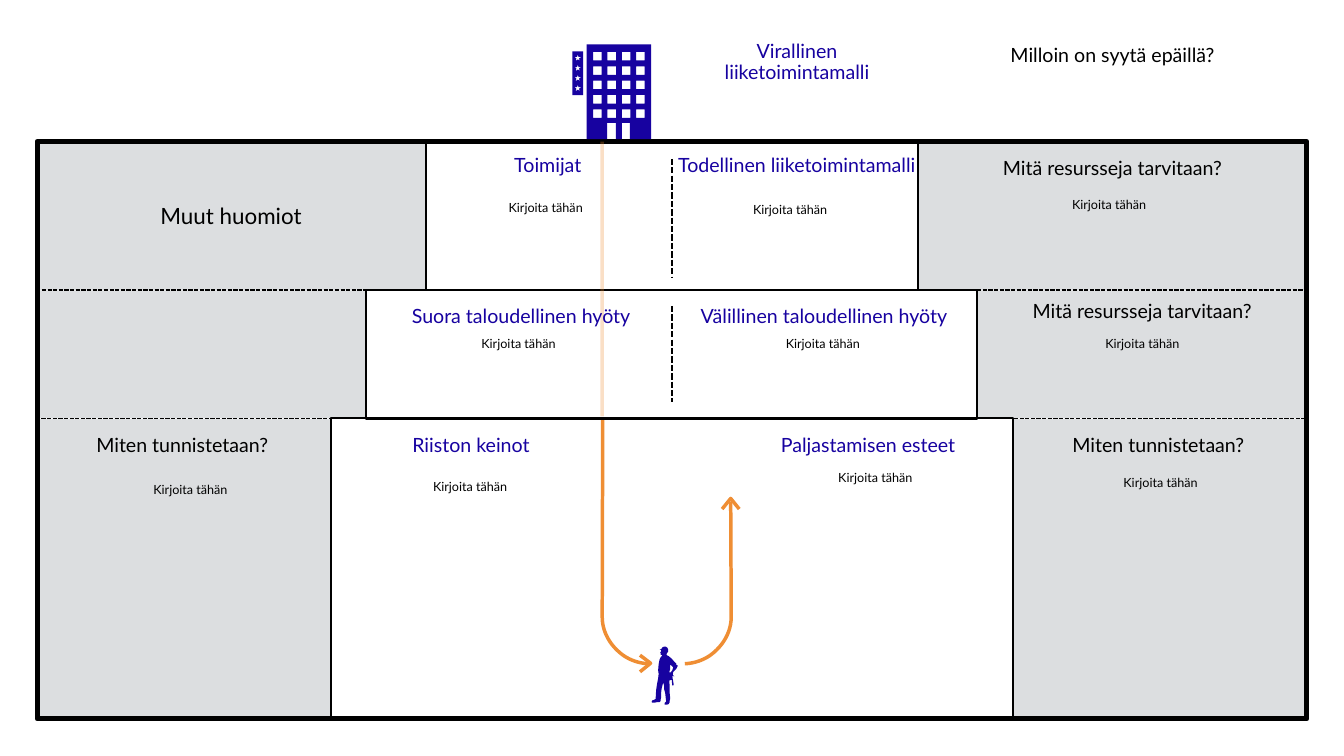
from pptx import Presentation
from pptx.dml.color import RGBColor
from pptx.enum.dml import MSO_LINE
from pptx.enum.shapes import MSO_CONNECTOR, MSO_SHAPE
from pptx.enum.text import MSO_ANCHOR, MSO_AUTO_SIZE, PP_ALIGN
from pptx.oxml.ns import qn
from pptx.util import Inches, Pt
from lxml.etree import SubElement

BLACK = RGBColor(0x00, 0x00, 0x00)
GREY = RGBColor(0xDC, 0xDE, 0xE0)
BLUE = RGBColor(0x17, 0x02, 0xA0)
ORANGE = RGBColor(0xEF, 0x8E, 0x34)

prs = Presentation()
prs.slide_width, prs.slide_height = Inches(26.67), Inches(15)
s = prs.slides.add_slide(prs.slide_layouts[6])


def add_outline(contours, fill=None):
    """Filled closed contours, or open orange lines when fill is None."""
    builder = None
    for contour in contours:
        points = [(Inches(x), Inches(y)) for x, y in contour]
        if builder is None:
            builder = s.shapes.build_freeform(*points[0])
        else:
            builder.move_to(*points[0])
        builder.add_line_segments(points[1:], close=fill is not None)
    sp = builder.convert_to_shape()
    sp.shadow.inherit = False
    if fill is None:
        sp.fill.background()
        sp.line.color.rgb = ORANGE
        sp.line.width = Pt(5)
    else:
        sp.fill.solid()
        sp.fill.fore_color.rgb = fill
        sp.line.fill.background()


def write(tf, text, size, color, spacing=None):
    tf.word_wrap = True
    p = tf.paragraphs[0]
    p.alignment = PP_ALIGN.CENTER
    if spacing:
        p.line_spacing = spacing
    r = p.add_run()
    r.text = text
    r.font.name, r.font.size, r.font.color.rgb = "Lato", Pt(size), color


# Route down to the worker: straight drop, then a curve of two Béziers
curves = [
    [(11.95, 12.24), (11.95, 12.54), (12.11, 12.81), (12.35, 12.99)],
    [(12.35, 12.99), (12.5, 13.1), (12.68, 13.16), (12.87, 13.17)],
]
bend = []
for a, b, c, d in curves:
    for i in range(13):
        t = i / 12
        bend.append(tuple(
            (1 - t) ** 3 * a[k] + 3 * (1 - t) ** 2 * t * b[k]
            + 3 * (1 - t) * t ** 2 * c[k] + t ** 3 * d[k] for k in (0, 1)))
add_outline([[(11.96, 8.29)] + bend])

# Side panels, then level boxes and the outer frame
LEFT, RIGHT = 0.73, 25.93
panels = []
for y, w, h in [(8.31, 5.82, 5.97), (5.76, 6.55, 2.53), (2.79, 7.71, 2.96)]:
    panels += [(LEFT, y, w, h), (RIGHT - w, y, w, h)]
for x, y, w, h in panels:
    sp = s.shapes.add_shape(MSO_SHAPE.RECTANGLE, Inches(x), Inches(y), Inches(w), Inches(h))
    sp.shadow.inherit = False
    sp.fill.solid()
    sp.fill.fore_color.rgb = GREY
    sp.line.fill.background()
    if (x, y) == (LEFT, 2.79):
        sp.text_frame.vertical_anchor = MSO_ANCHOR.MIDDLE
        write(sp.text_frame, "Muut huomiot", 32, BLACK)

for x, y, w, h, width in [
    (6.56, 8.3, 13.54, 5.98, 3),
    (7.27, 5.75, 12.12, 2.56, 3),
    (8.45, 2.79, 9.76, 2.96, 3),
    (0.74, 2.81, 25.19, 11.45, 8),
]:
    sp = s.shapes.add_shape(MSO_SHAPE.RECTANGLE, Inches(x), Inches(y), Inches(w), Inches(h))
    sp.shadow.inherit = False
    sp.fill.background()
    sp.line.color.rgb = BLACK
    sp.line.width = Pt(width)

# Dividers and the faint upper part of the route
for x1, y1, x2, y2, color, width, dash in [
    (11.95, 8.26, 11.95, 2.81, ORANGE, 5, None),
    (0.71, 8.3, 6.53, 8.3, BLACK, 2, MSO_LINE.SQUARE_DOT),
    (20.12, 8.3, 25.95, 8.3, BLACK, 2, MSO_LINE.SQUARE_DOT),
    (19.39, 5.75, 25.88, 5.75, BLACK, 2, MSO_LINE.SQUARE_DOT),
    (0.72, 5.75, 7.28, 5.75, BLACK, 2, MSO_LINE.SQUARE_DOT),
    (13.33, 6.07, 13.33, 7.98, BLACK, 3, MSO_LINE.SQUARE_DOT),
    (13.33, 3.15, 13.33, 5.49, BLACK, 3, MSO_LINE.SQUARE_DOT),
]:
    line = s.shapes.add_connector(
        MSO_CONNECTOR.STRAIGHT, Inches(x1), Inches(y1), Inches(x2), Inches(y2))
    line.line.color.rgb = color
    line.line.width = Pt(width)
    if dash:
        line.line.dash_style = dash
    else:
        rgb = line._element.spPr.find(".//" + qn("a:srgbClr"))
        SubElement(rgb, qn("a:alpha")).set("val", "27000")
    SubElement(line._element.spPr, qn("a:effectLst"))

# Office building: walls with doors, sign, windows and stars
building = [
    [(11.64, 0.88), (11.64, 2.76), (12.05, 2.76), (12.05, 2.44), (12.22, 2.44),
     (12.22, 2.76), (12.34, 2.76), (12.34, 2.44), (12.5, 2.44), (12.5, 2.76),
     (12.92, 2.76), (12.92, 0.88)],
    [(11.36, 1.02), (11.36, 1.89), (11.57, 1.89), (11.57, 1.02)],
]
for row in range(5):
    for col in range(4):
        x, y = 11.77 + col * 0.285, 1.03 + row * 0.285
        building.append([(x, y), (x + 0.17, y), (x + 0.17, y + 0.17), (x, y + 0.17)])
star = [(0, 0), (0.01, 0.05), (0.07, 0.05), (0.02, 0.08), (0.04, 0.13),
        (0, 0.1), (-0.05, 0.13), (-0.03, 0.08), (-0.07, 0.05), (-0.02, 0.05)]
for i in range(4):
    building.append([(11.47 + dx, 1.08 + i * 0.2 + dy) for dx, dy in star])
add_outline(building, BLUE)

# Worker silhouette, with the gap inside the bent arm
worker = [
    (13.18, 12.83), (13.15, 12.84), (13.12, 12.88), (13.09, 12.89), (13.12, 12.9),
    (13.12, 12.93), (13.1, 12.94), (13.11, 12.95), (13.11, 12.99), (13.14, 13),
    (13.14, 13.01), (13.11, 13.04), (13.09, 13.08), (13.07, 13.18), (13.06, 13.3),
    (13.07, 13.37), (13.06, 13.46), (13.04, 13.56), (13.02, 13.7), (13.01, 13.87),
    (12.97, 13.89), (12.94, 13.9), (12.93, 13.93), (12.94, 13.94), (13, 13.94),
    (13.04, 13.93), (13.09, 13.93), (13.11, 13.91), (13.11, 13.88), (13.12, 13.83),
    (13.12, 13.74), (13.13, 13.66), (13.16, 13.54), (13.18, 13.61), (13.18, 13.68),
    (13.2, 13.75), (13.21, 13.84), (13.22, 13.92), (13.19, 13.95), (13.19, 13.98),
    (13.24, 13.98), (13.27, 13.97), (13.29, 13.93), (13.29, 13.9), (13.3, 13.86),
    (13.29, 13.76), (13.29, 13.62), (13.28, 13.5), (13.33, 13.49), (13.34, 13.6),
    (13.36, 13.6), (13.37, 13.59), (13.36, 13.53), (13.35, 13.47), (13.34, 13.45),
    (13.35, 13.44), (13.34, 13.42), (13.35, 13.41), (13.38, 13.42), (13.35, 13.39),
    (13.36, 13.33), (13.42, 13.27), (13.45, 13.21), (13.41, 13.18), (13.42, 13.17),
    (13.39, 13.14), (13.33, 13.07), (13.27, 13.02), (13.23, 13), (13.23, 12.97),
    (13.25, 12.94), (13.26, 12.93), (13.26, 12.89), (13.24, 12.85), (13.21, 12.83),
]
arm_gap = [(13.31, 13.19), (13.33, 13.21), (13.36, 13.24), (13.34, 13.3),
           (13.31, 13.34), (13.28, 13.34), (13.3, 13.27), (13.3, 13.2)]
add_outline([worker, arm_gap], BLUE)

# Mirrored route upwards and both arrow tips
add_outline([[(14.5, 9.96)] + [(26.46 - x, y) for x, y in bend]])
add_outline([[(12.7, 13), (12.91, 13.16), (12.7, 13.33)]])
add_outline([[(14.33, 10.1), (14.5, 9.89), (14.67, 10.1)]])

# Headings
for text, x, y, w, h, color, spacing in [
    ("Virallinen liiketoimintamalli", 14.13, 0.83, 3.37, 1, BLUE, 0.9),
    ("Milloin on syytä epäillä?", 18.83, 0.8, 6.49, 0.65, BLACK, 1.1),
    ("Toimijat", 8.67, 3.08, 4.4, 0.91, BLUE, 0.9),
    ("Todellinen liiketoimintamalli", 13.35, 3.08, 4.92, 0.91, BLUE, 0.9),
    ("Mitä resursseja tarvitaan?", 19.45, 3.05, 5.25, 0.55, BLACK, 1.1),
    ("Suora taloudellinen hyöty", 7.54, 5.98, 5.6, 0.55, BLUE, 1.1),
    ("Välillinen taloudellinen hyöty", 13.55, 5.98, 5.6, 0.55, BLUE, 1.1),
    ("Mitä resursseja tarvitaan?", 20.04, 5.88, 5.25, 0.55, BLACK, 1.1),
    ("Miten tunnistetaan?", 0.99, 8.55, 5.25, 0.55, BLACK, 1.1),
    ("Riiston keinot", 6.72, 8.54, 5.25, 0.55, BLUE, 1.1),
    ("Paljastamisen esteet", 14.6, 8.54, 5.25, 0.55, BLUE, 1.1),
    ("Miten tunnistetaan?", 20.36, 8.55, 5.25, 1.15, BLACK, 1.1),
]:
    tf = s.shapes.add_textbox(Inches(x), Inches(y), Inches(w), Inches(h)).text_frame
    tf.margin_left = tf.margin_right = tf.margin_top = tf.margin_bottom = 0
    write(tf, text, 28, color, spacing)

# Fields to fill in
for x, y in [(8.7, 3.92), (13.55, 3.96), (19.88, 3.86), (8.16, 6.62), (14.2, 6.62),
             (20.54, 6.61), (1.65, 9.52), (7.2, 9.46), (15.24, 9.28), (20.9, 9.37)]:
    tf = s.shapes.add_textbox(Inches(x), Inches(y), Inches(4.26), Inches(0.4)).text_frame
    tf.auto_size = MSO_AUTO_SIZE.SHAPE_TO_FIT_TEXT
    write(tf, "Kirjoita tähän", 18, BLACK)

prs.save("out.pptx")
